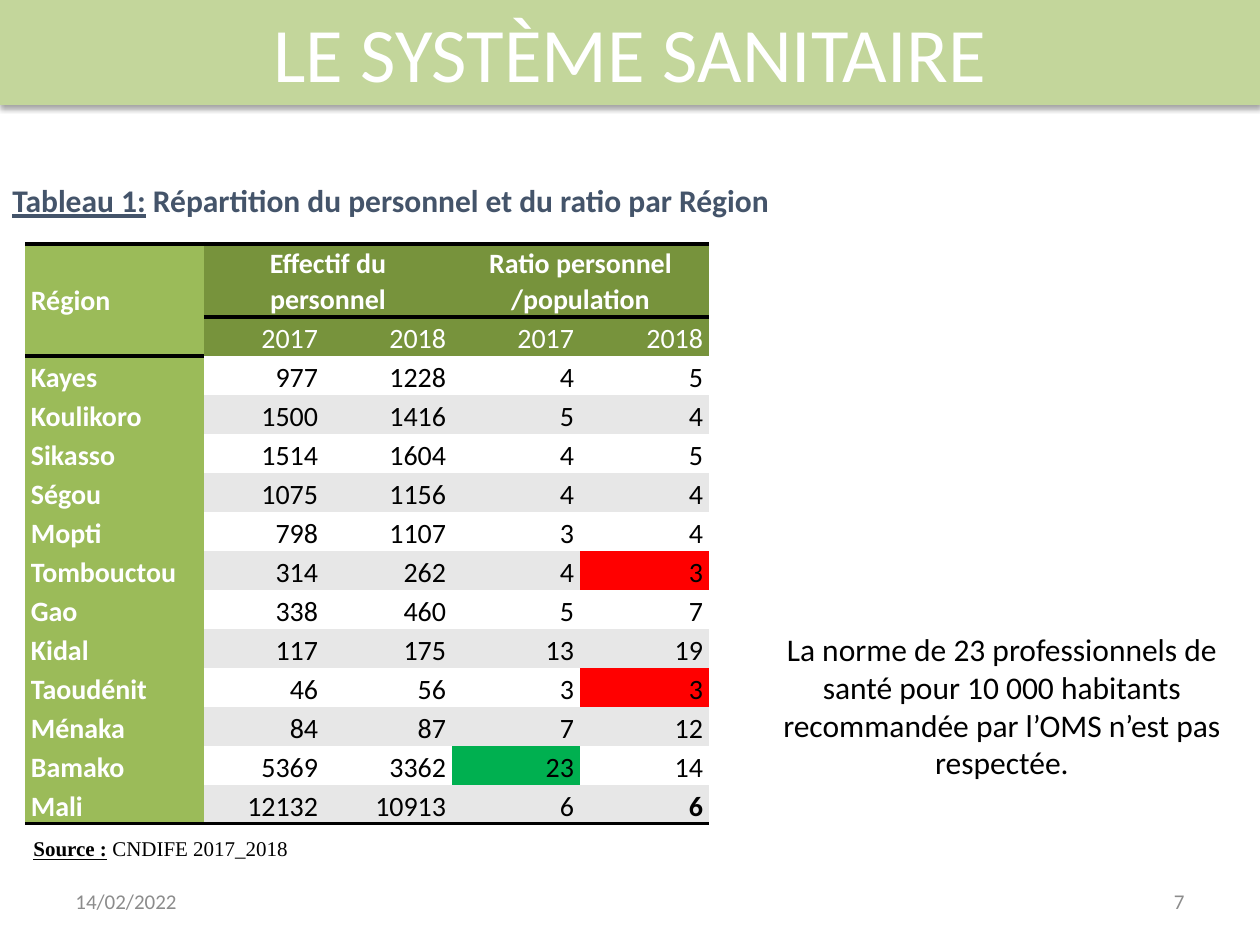
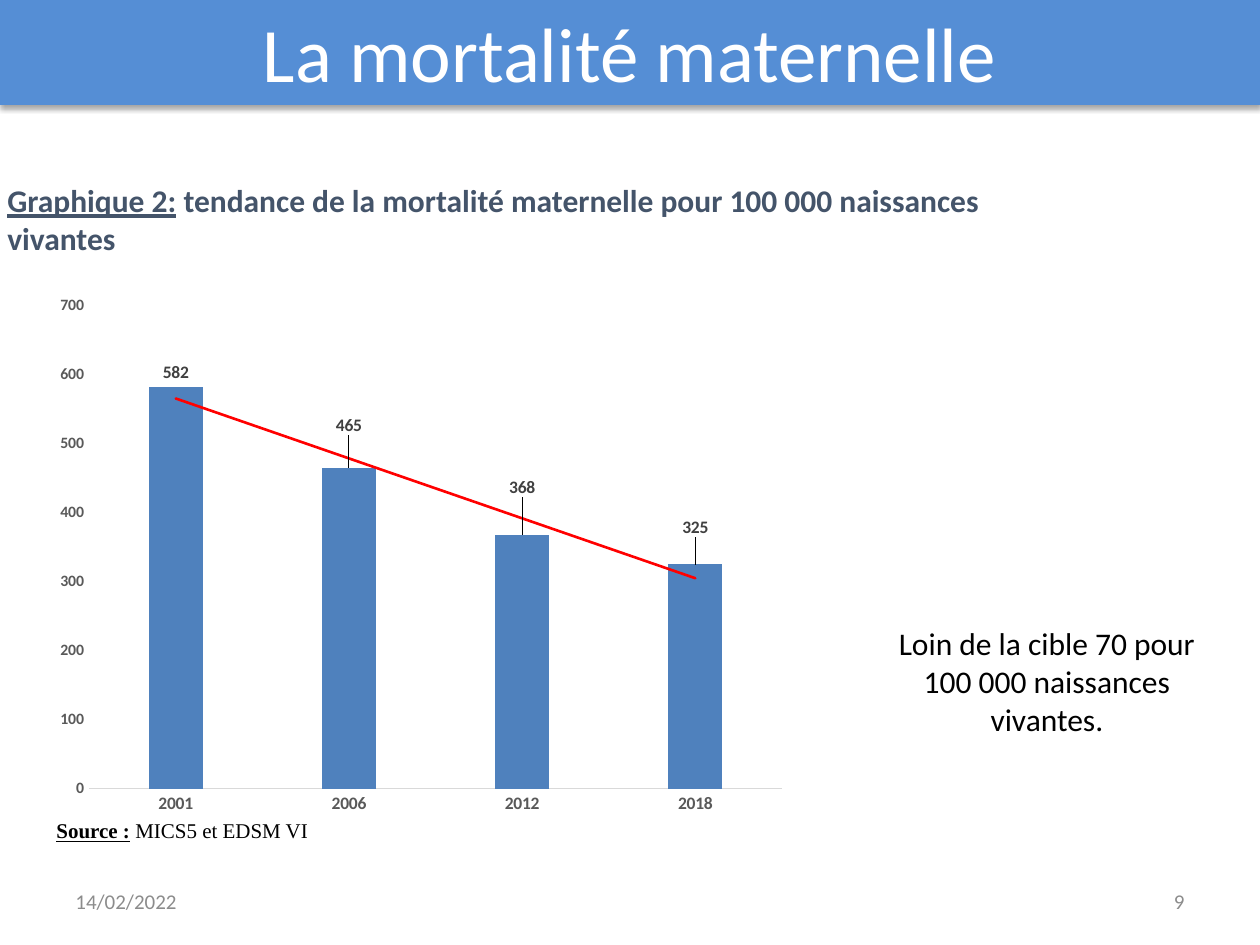
import pptx
import pptx.util
import pptx.chart.data
import pptx.dml.color
import pptx.enum.chart
import pptx.enum.shapes
import pptx.enum.text
import pptx.oxml
import pptx.oxml.ns
from lxml import etree

# Shared look
COLORS = {
    "white": "FFFFFF", "black": "000000", "caption": "44546A", "footer": "8C8C8C",
    "green band": "C3D69B", "blue band": "558ED5",
    "region": "9BBB59", "heading": "77933C", "stripe": "E7E7E7",
    "low": "FF0000", "norm met": "00B050",
    "bar": "4F81BD", "trend": "FF0000", "axis text": "595959",
    "axis line": "D9D9D9", "label": "404040",
}
SANS, SERIF = "Calibri", "Times New Roman"
SLIDE_W, SLIDE_H, PX_PER_INCH = 1260, 945, 126
DATE = "14/02/2022"
NO_STYLE = "{2D5ABB26-0587-4C30-8999-92F81FD0307C}"

# Content: boxes are left, top, width, height in px
STAFF_SLIDE = {
    "title": "LE SYSTÈME SANITAIRE", "band": "green band", "number": "7",
    "caption": ("Tableau 1:", " Répartition du personnel et du ratio par Région"),
    "caption box": (0, 175, 927, 50),
    "source": ("Source :", " CNDIFE 2017_2018"), "source box": (21, 828, 639, 39),
    "note": "La norme de 23 professionnels de santé pour 10 000 habitants "
            "recommandée par l’OMS n’est pas respectée.",
    "note box": (769, 621, 466, 169),
}
DEATHS_SLIDE = {
    "title": "La mortalité maternelle", "band": "blue band", "number": "9",
    "caption": ("Graphique 2:", " tendance de la mortalité maternelle "
                                "pour 100 000 naissances vivantes"),
    "caption box": (-5, 175, 1084, 89),
    "source": ("Source :", " MICS5 et EDSM VI"), "source box": (44, 810, 639, 39),
    "note": "Loin de la cible 70 pour 100 000 naissances vivantes.",
    "note box": (878, 562, 338, 238),
}
GROUPS = ["Effectif du personnel", "Ratio personnel /population"]
YEARS = ["2017", "2018"]
REGIONS = [
    ("Kayes", 977, 1228, 4, 5),
    ("Koulikoro", 1500, 1416, 5, 4),
    ("Sikasso", 1514, 1604, 4, 5),
    ("Ségou", 1075, 1156, 4, 4),
    ("Mopti", 798, 1107, 3, 4),
    ("Tombouctou", 314, 262, 4, 3),
    ("Gao", 338, 460, 5, 7),
    ("Kidal", 117, 175, 13, 19),
    ("Taoudénit", 46, 56, 3, 3),
    ("Ménaka", 84, 87, 7, 12),
    ("Bamako", 5369, 3362, 23, 14),
    ("Mali", 12132, 10913, 6, 6),
]
HIGHLIGHTS = {("Tombouctou", 4): "low", ("Taoudénit", 4): "low", ("Bamako", 3): "norm met"}
TABLE_LEFT, TABLE_TOP = 25, 244
COL_WIDTHS = [179, 120, 128, 128, 129]
HEADING_H, ROW_H = 73, 39

DEATHS = {"2001": 582, "2006": 465, "2012": 368, "2018": 325}
LABEL_LIFTS = {1: 0.05, 2: 0.06, 3: 0.04}  # share of the chart height
CHART_BOX = (44, 284, 753, 537)
PLOT_AREA = {"x": 0.06, "y": 0.04, "w": 0.92, "h": 0.9}

ALIGN = pptx.enum.text.PP_ALIGN
ANCHOR = pptx.enum.text.MSO_ANCHOR
qn = pptx.oxml.ns.qn


def px(n):
    return pptx.util.Emu(round(n * 914400 / PX_PER_INCH))


def rgb(name):
    return pptx.dml.color.RGBColor.from_string(COLORS[name])


def xml(text):
    return pptx.oxml.parse_xml(text.replace(">", " %s>" % pptx.oxml.ns.nsdecls("a", "c"), 1))


# Text
def style_font(font, size, color, bold=False, name=SANS):
    font.name, font.size, font.bold = name, pptx.util.Pt(size), bold
    font.color.rgb = rgb(color)


def add_run(p, text, size, color, bold=False, name=SANS, underline=False):
    r = p.add_run()
    r.text = text
    style_font(r.font, size, color, bold, name)
    r.font.underline = underline


def set_paragraph(p, align=ALIGN.LEFT, after=0, spacing=None):
    p.alignment, p.space_after = align, pptx.util.Pt(after)
    p.line_spacing = spacing


def add_text(s, box, anchor=ANCHOR.TOP, **paragraph):
    tf = s.shapes.add_textbox(*map(px, box)).text_frame
    tf.word_wrap, tf.vertical_anchor = True, anchor
    set_paragraph(tf.paragraphs[0], **paragraph)
    return tf.paragraphs[0]


# Parts shared by both slides
def add_band(s, title, color):
    sp = s.shapes.add_shape(pptx.enum.shapes.MSO_SHAPE.RECTANGLE,
                            *map(px, (0, -2, SLIDE_W, 107)))
    sp.fill.solid()
    sp.fill.fore_color.rgb = rgb(color)
    sp.line.fill.background()
    sp.shadow.inherit = False
    sp._element.spPr.find(qn("a:effectLst")).append(xml(
        '<a:outerShdw blurRad="40000" dist="23000" dir="5400000" rotWithShape="0">'
        '<a:srgbClr val="%s"><a:alpha val="35000"/></a:srgbClr></a:outerShdw>'
        % COLORS["black"]))
    tf = sp.text_frame
    tf.word_wrap, tf.vertical_anchor = True, ANCHOR.MIDDLE
    set_paragraph(tf.paragraphs[0], ALIGN.CENTER)
    add_run(tf.paragraphs[0], title, 44, "white")


def add_slide(prs, content):
    s = prs.slides.add_slide(prs.slide_layouts[6])
    add_band(s, content["title"], content["band"])

    p = add_text(s, content["caption box"], after=10)
    for i, text in enumerate(content["caption"]):
        add_run(p, text, 18, "caption", bold=True, underline=i == 0)

    p = add_text(s, content["source box"], align=ALIGN.JUSTIFY, after=8, spacing=1.07)
    for i, text in enumerate(content["source"]):
        add_run(p, text, 12, "black", bold=i == 0, name=SERIF, underline=i == 0)

    p = add_text(s, content["note box"], ANCHOR.MIDDLE, align=ALIGN.CENTER)
    add_run(p, content["note"], 18, "black")

    for left, text, align in ((63, DATE, ALIGN.LEFT),
                              (903, content["number"], ALIGN.RIGHT)):
        p = add_text(s, (left, 876, 294, 50), ANCHOR.MIDDLE, align=align)
        add_run(p, text, 12, "footer")
    return s


# Staff table
def add_border(cell, side):
    etree.SubElement(cell._tc.get_or_add_tcPr(), qn("a:ln" + side), w="25400").append(xml(
        '<a:solidFill><a:srgbClr val="%s"/></a:solidFill>' % COLORS["black"]))


def fill_cell(cell, text, fill, color, align, bold=False):
    cell.fill.solid()
    cell.fill.fore_color.rgb = rgb(fill)
    cell.margin_left = cell.margin_right = px(6)
    cell.margin_top = cell.margin_bottom = 0
    cell.vertical_anchor = ANCHOR.BOTTOM
    p = cell.text_frame.paragraphs[0]
    set_paragraph(p, align, 8, 1.07)
    add_run(p, text, 16, color, bold)


def add_staff_table(s):
    n_rows = len(REGIONS) + 2
    heights = [HEADING_H] + [ROW_H] * (n_rows - 1)
    frame = s.shapes.add_table(n_rows, len(COL_WIDTHS), px(TABLE_LEFT), px(TABLE_TOP),
                               px(sum(COL_WIDTHS)), px(sum(heights)))
    table = frame.table
    table._tbl.tblPr.find(qn("a:tableStyleId")).text = NO_STYLE
    for column, width in zip(table.columns, COL_WIDTHS):
        column.width = px(width)
    for row, height in zip(table.rows, heights):
        row.height = px(height)

    # Rules come before the fills in the cell properties
    for c in range(len(COL_WIDTHS)):
        add_border(table.cell(0, c), "T")
        for r in (0, n_rows - 1):
            add_border(table.cell(r, c), "B")
    add_border(table.cell(1, 0), "B")

    # Headings
    corner = table.cell(0, 0)
    corner.merge(table.cell(1, 0))
    fill_cell(corner, "Région", "region", "white", ALIGN.LEFT, True)
    corner.vertical_anchor = ANCHOR.MIDDLE
    for g, group in enumerate(GROUPS):
        first = 1 + g * len(YEARS)
        table.cell(0, first).merge(table.cell(0, first + len(YEARS) - 1))
        fill_cell(table.cell(0, first), group, "heading", "white", ALIGN.CENTER, True)
        for y, year in enumerate(YEARS):
            fill_cell(table.cell(1, first + y), year, "heading", "white", ALIGN.RIGHT)

    # Regions
    for i, (region, *values) in enumerate(REGIONS):
        fill_cell(table.cell(i + 2, 0), region, "region", "white", ALIGN.LEFT, True)
        for c, value in enumerate(values, 1):
            fill = HIGHLIGHTS.get((region, c), "stripe" if i % 2 else "white")
            fill_cell(table.cell(i + 2, c), str(value), fill, "black", ALIGN.RIGHT,
                      bold=region == "Mali" and c == len(values))


# Mortality chart
def manual_layout(target="", **values):
    parts = "".join('<c:%s val="%s"/>' % item for item in values.items())
    return xml("<c:layout><c:manualLayout>%s%s</c:manualLayout></c:layout>" % (target, parts))


def add_deaths_chart(s):
    data = pptx.chart.data.CategoryChartData()
    data.categories = list(DEATHS)
    data.add_series("Series 1", list(DEATHS.values()))
    chart = s.shapes.add_chart(pptx.enum.chart.XL_CHART_TYPE.COLUMN_CLUSTERED,
                               *map(px, CHART_BOX), data).chart
    chart.has_legend = chart.has_title = False
    style_font(chart.font, 10, "black")

    # Axes
    for axis, size in ((chart.category_axis, 10), (chart.value_axis, 9)):
        axis.has_major_gridlines = False
        axis.major_tick_mark = axis.minor_tick_mark = pptx.enum.chart.XL_TICK_MARK.NONE
        style_font(axis.tick_labels.font, size, "axis text", True)
    chart.category_axis.format.line.color.rgb = rgb("axis line")
    chart.category_axis.format.line.width = pptx.util.Pt(0.75)
    chart.value_axis.format.line.fill.background()
    chart.value_axis.minimum_scale, chart.value_axis.maximum_scale = 0, 700
    chart.value_axis.major_unit = 100

    # Bars and labels
    plot = chart.plots[0]
    plot.gap_width, plot.overlap, plot.vary_by_categories = 219, -27, False
    series = plot.series[0]
    series.format.fill.solid()
    series.format.fill.fore_color.rgb = rgb("bar")
    outside = pptx.enum.chart.XL_LABEL_POSITION.OUTSIDE_END
    labels = series.data_labels
    labels.show_value, labels.position = True, outside
    style_font(labels.font, 10, "label", True)
    for i, lift in LABEL_LIFTS.items():
        label = series.points[i].data_label
        style_font(label.font, 10, "label", True)
        label.position = outside
        idx = labels._element.xpath('c:dLbl/c:idx[@val="%d"]' % i)[0]
        idx.addnext(manual_layout(x=0, y=-lift))

    # Trend line and plot area
    series._element.find(qn("c:cat")).addprevious(xml(
        '<c:trendline><c:spPr><a:ln w="19050" cap="rnd"><a:solidFill><a:srgbClr val="%s"/>'
        '</a:solidFill></a:ln></c:spPr><c:trendlineType val="linear"/><c:dispRSqr val="0"/>'
        '<c:dispEq val="0"/></c:trendline>' % COLORS["trend"]))
    area = chart._chartSpace.chart.plotArea
    for old in area.findall(qn("c:layout")):
        area.remove(old)
    area.insert(0, manual_layout(
        '<c:layoutTarget val="inner"/><c:xMode val="edge"/><c:yMode val="edge"/>', **PLOT_AREA))


def main():
    prs = pptx.Presentation()
    prs.slide_width, prs.slide_height = px(SLIDE_W), px(SLIDE_H)
    add_staff_table(add_slide(prs, STAFF_SLIDE))
    add_deaths_chart(add_slide(prs, DEATHS_SLIDE))
    prs.save("out.pptx")


if __name__ == "__main__":
    main()
